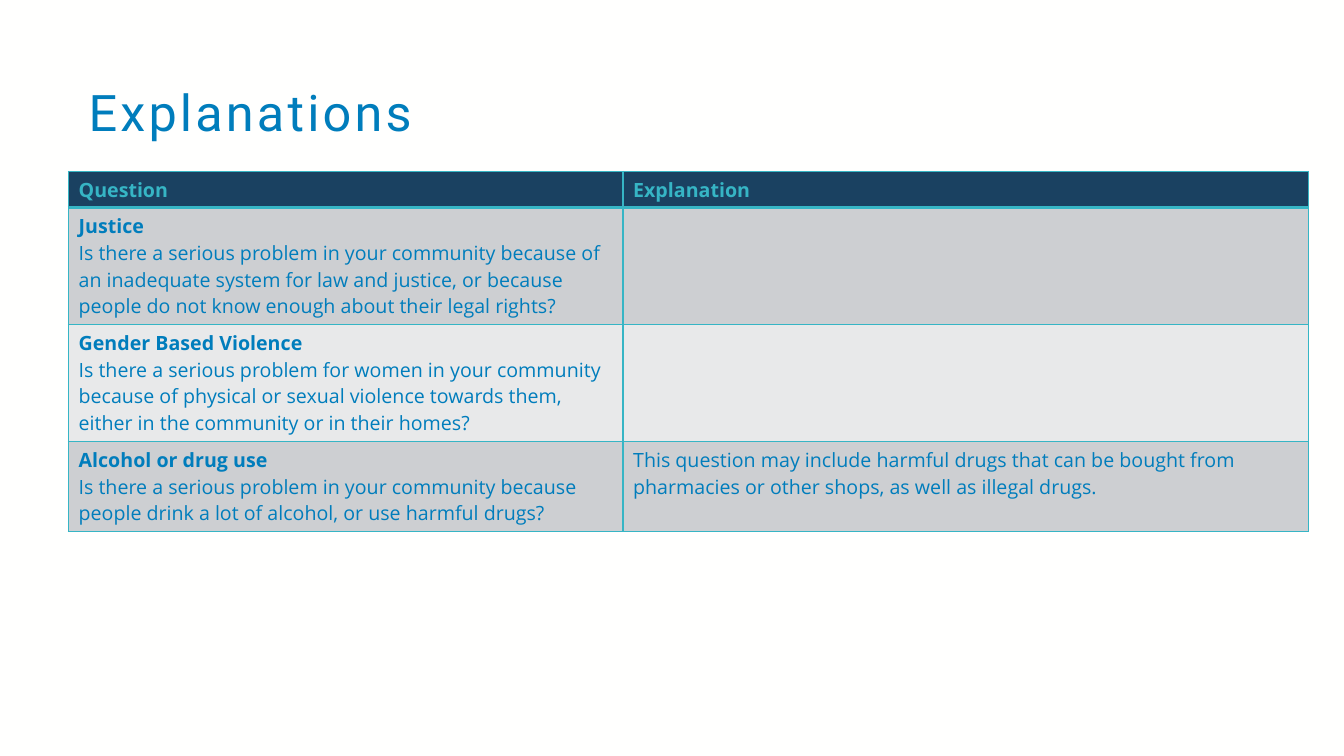
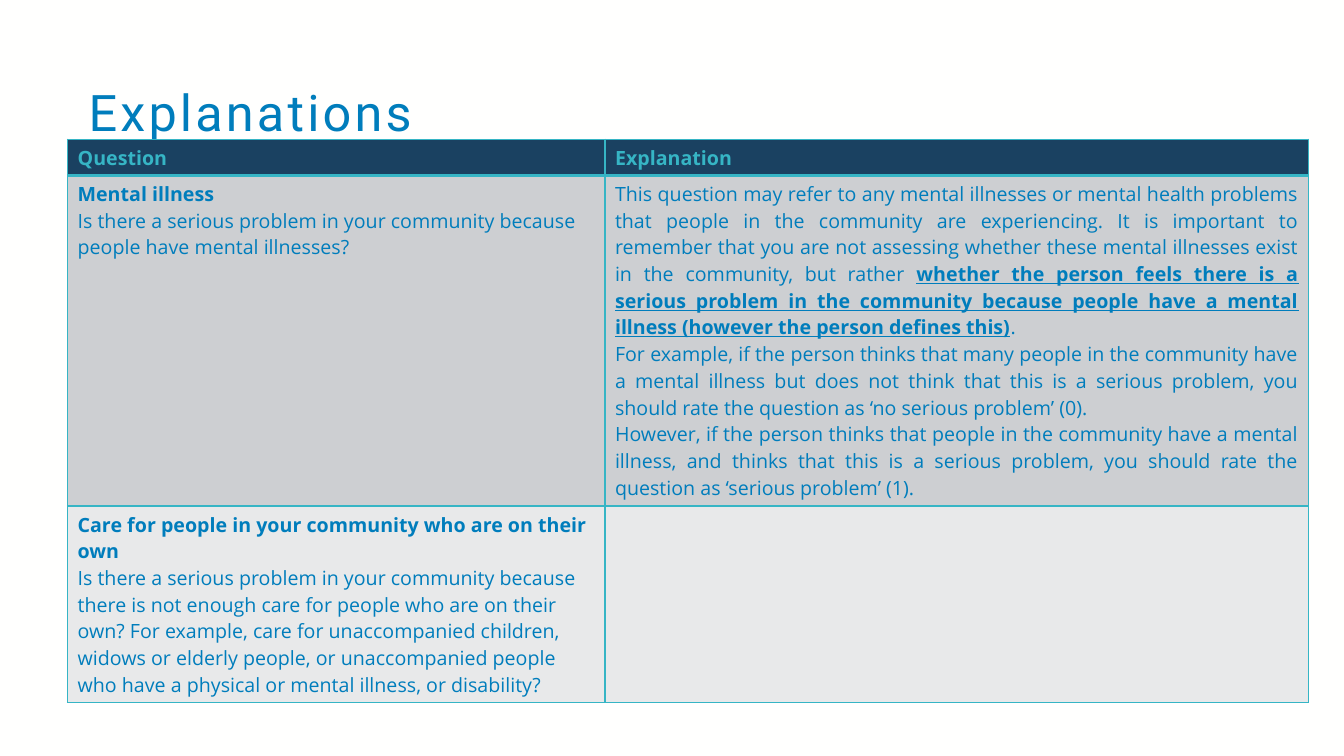
from pptx import Presentation
from pptx.dml.color import RGBColor
from pptx.enum.text import MSO_ANCHOR, PP_ALIGN
from pptx.util import Inches, Pt
from lxml.etree import SubElement
from pptx.oxml.ns import qn

PAPER = RGBColor(0xFF, 0xFF, 0xFE)
BLUE = RGBColor(0x00, 0x7D, 0xBC)
TEAL = RGBColor(0x36, 0xB5, 0xC5)
NAVY = RGBColor(0x1A, 0x41, 0x61)
BANDS = [RGBColor(0xCD, 0xCF, 0xD2), RGBColor(0xE8, 0xE9, 0xEA)]
HEADER_HEIGHT = 0.36
HEADINGS = ["Question", "Explanation"]

SLIDES = [
    {
        "left": 0.68, "top": 1.7, "columns": [5.5, 6.8], "align": PP_ALIGN.LEFT,
        "rows": [
            (1.16, "Justice",
             "Is there a serious problem in your community because of an inadequate system for law "
             "and justice, or because people do not know enough about their legal rights?", []),
            (1.16, "Gender Based Violence",
             "Is there a serious problem for women in your community because of physical or sexual "
             "violence towards them, either in the community or in their homes?", []),
            (0.89, "Alcohol or drug use",
             "Is there a serious problem in your community because people drink a lot of alcohol, "
             "or use harmful drugs?",
             [["This question may include harmful drugs that can be bought from pharmacies or other "
               "shops, as well as illegal drugs."]]),
        ],
    },
    {
        "left": 0.67, "top": 1.38, "columns": [5.33, 6.98], "align": PP_ALIGN.JUSTIFY,
        "rows": [
            (3.28, "Mental illness",
             "Is there a serious problem in your community because people have mental illnesses?",
             [["This question may refer to any mental illnesses or mental health problems that people "
               "in the community are experiencing. It is important to remember that you are not "
               "assessing whether these mental illnesses exist in the community, but rather ",
               "whether the person feels there is a serious problem in the community because people "
               "have a mental illness (however the person defines this)",
               "."],
              ["For example, if the person thinks that many people in the community have a mental "
               "illness but does not think that this is a serious problem, you should rate the "
               "question as ‘no serious problem’ (0)."],
              ["However, if the person thinks that people in the community have a mental illness, and "
               "thinks that this is a serious problem, you should rate the question as ‘serious "
               "problem’ (1)."]]),
            (1.95, "Care for people in your community who are on their own",
             "Is there a serious problem in your community because there is not enough care for people "
             "who are on their own? For example, care for unaccompanied children, widows or elderly "
             "people, or unaccompanied people who have a physical or mental illness, or disability?",
             []),
        ],
    },
]


def style_cell(cell, fill, top, bottom):
    properties = cell._tc.get_or_add_tcPr()
    for side, points in (("L", 1), ("R", 1), ("T", top), ("B", bottom)):
        line = SubElement(properties, qn(f"a:ln{side}"), w=str(Pt(points)))
        SubElement(SubElement(line, qn("a:solidFill")), qn("a:srgbClr"), val=str(TEAL))
    cell.fill.solid()
    cell.fill.fore_color.rgb = fill


def write_span(para, text, color, bold=False, underline=False):
    span = para.add_run()
    span.text = text
    span.font.name = "Open Sans"
    span.font.size = Pt(14)
    span.font.color.rgb = color
    span.font.bold = bold
    span.font.underline = underline


deck = Presentation()
deck.slide_width, deck.slide_height = Inches(13.33), Inches(7.5)

for content in SLIDES:
    page = deck.slides.add_slide(deck.slide_layouts[6])
    page.background.fill.solid()
    page.background.fill.fore_color.rgb = PAPER

    title = page.shapes.add_textbox(Inches(0.78), Inches(0.78), Inches(12.09), Inches(0.72))
    title.text_frame.word_wrap = True
    title.text_frame.vertical_anchor = MSO_ANCHOR.MIDDLE
    title.text_frame.text = "Explanations"
    para = title.text_frame.paragraphs[0]
    para.line_spacing = 0.9
    span = para.runs[0]
    span.font.name = "Roboto"
    span.font.size = Pt(36)
    span.font.color.rgb = BLUE
    span.font._element.set("spc", "230")

    heights = [HEADER_HEIGHT] + [row[0] for row in content["rows"]]
    table = page.shapes.add_table(
        len(heights), 2, Inches(content["left"]), Inches(content["top"]),
        Inches(sum(content["columns"])), Inches(sum(heights))).table
    table.horz_banding = False
    for column, width in zip(table.columns, content["columns"]):
        column.width = Inches(width)
    for row, height in zip(table.rows, heights):
        row.height = Inches(height)

    for column, heading in enumerate(HEADINGS):
        cell = table.cell(0, column)
        style_cell(cell, NAVY, 1, 3)
        write_span(cell.text_frame.paragraphs[0], heading, TEAL, bold=True)

    for number, (height, topic, question, explanation) in enumerate(content["rows"], 1):
        question_cell, explanation_cell = table.cell(number, 0), table.cell(number, 1)
        for cell in (question_cell, explanation_cell):
            style_cell(cell, BANDS[(number - 1) % 2], 3 if number == 1 else 1, 1)
        write_span(question_cell.text_frame.paragraphs[0], topic, BLUE, bold=True)
        write_span(question_cell.text_frame.add_paragraph(), question, BLUE)
        frame = explanation_cell.text_frame
        for index, pieces in enumerate(explanation):
            para = frame.add_paragraph() if index else frame.paragraphs[0]
            para.alignment = content["align"]
            for position, text in enumerate(pieces):
                stressed = position % 2 == 1
                write_span(para, text, BLUE, stressed, stressed)

deck.save("out.pptx")
